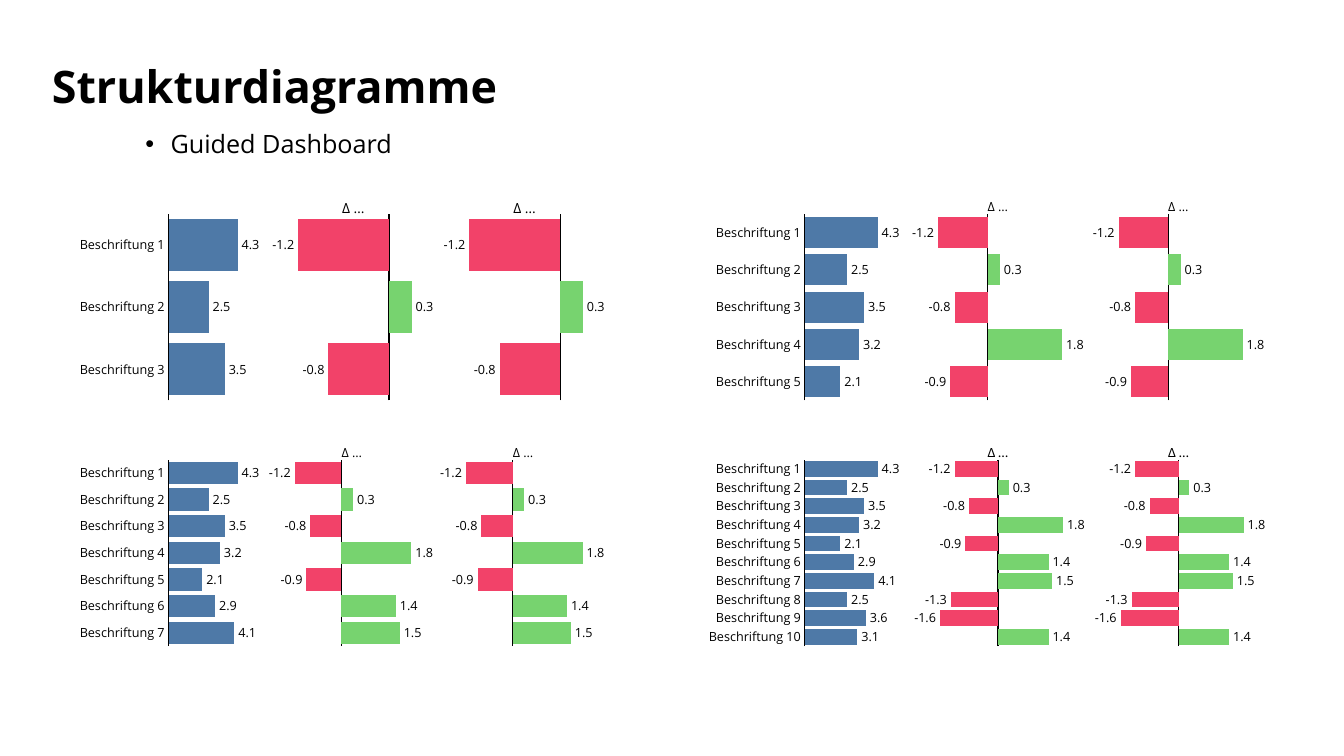
from lxml.etree import SubElement
from pptx import Presentation
from pptx.chart.data import CategoryChartData
from pptx.dml.color import RGBColor
from pptx.enum.chart import XL_CHART_TYPE, XL_LABEL_POSITION, XL_TICK_LABEL_POSITION, XL_TICK_MARK
from pptx.enum.text import MSO_ANCHOR
from pptx.oxml.ns import qn
from pptx.util import Pt

PX = 9525
FONT = "Open Sans"
COLORS = {"text": "000000", "value": "4E79A7", "gain": "77D36F", "loss": "F24269"}
VALUES = [4.3, 2.5, 3.5, 3.2, 2.1, 2.9, 4.1, 2.5, 3.6, 3.1]
DELTAS = [-1.2, 0.3, -0.8, 1.8, -0.9, 1.4, 1.5, -1.3, -1.6, 1.4]
LEFT = {"label_x": 52, "label_width": 200, "delta_xs": (255, 418), "delta_width": 159}
RIGHT = {"label_x": 652, "label_width": 211, "delta_xs": (866, 1038), "delta_width": 169}
TOP_ROW, BOTTOM_ROW, CHART_HEIGHT = 173, 407, 223


def color(name):
    """Return the named colour."""
    return RGBColor.from_string(COLORS[name])


def style_font(font, size, bold=False, name=FONT):
    """Give a font its face, size and text colour."""
    font.name, font.size, font.bold = name, Pt(size), bold
    font.color.rgb = color("text")


def add_text(slide, text, box, size, bold=False, anchor=MSO_ANCHOR.TOP, bullet=None):
    """Add one paragraph of text, with a hanging bullet if given."""
    frame = slide.shapes.add_textbox(*(n * PX for n in box)).text_frame
    frame.word_wrap = True
    frame.vertical_anchor = anchor
    paragraph = frame.paragraphs[0]
    paragraph.line_spacing = 0.9
    run = paragraph.add_run()
    run.text = text
    style_font(run.font, size, bold)
    if bullet:
        properties = paragraph._p.get_or_add_pPr()
        properties.set("marL", str(24 * PX))
        properties.set("indent", str(-24 * PX))
        SubElement(properties, qn("a:buFont")).set("typeface", "Arial")
        SubElement(properties, qn("a:buChar")).set("char", bullet)


def set_layout(parent, **settings):
    """Place a chart part by fractions of the chart's size."""
    layout = parent.find(qn("c:layout"))
    if layout is None:
        layout = SubElement(parent, qn("c:layout"))
        parent.insert(0, layout)
    manual = SubElement(layout, qn("c:manualLayout"))
    for tag, value in settings.items():
        SubElement(manual, qn(f"c:{tag}")).set("val", str(value))


def add_bars(slide, box, categories, values, scale, fill, plot_x, plot_width):
    """Add a horizontal bar chart without visible value axis."""
    data = CategoryChartData(number_format="#,##0.0")
    data.categories = categories
    data.add_series("Series 1", values)
    chart = slide.shapes.add_chart(
        XL_CHART_TYPE.BAR_CLUSTERED, *(n * PX for n in box), data).chart
    chart.has_legend = chart.has_title = False
    style_font(chart.font, 9)
    set_layout(chart._chartSpace.chart.plotArea, layoutTarget="inner", xMode="edge",
               yMode="edge", x=plot_x, y=0.138, w=plot_width, h=0.797)
    value_axis, category_axis = chart.value_axis, chart.category_axis
    value_axis.minimum_scale, value_axis.maximum_scale = scale
    value_axis.has_major_gridlines = value_axis.visible = False
    category_axis.reverse_order = True
    category_axis.major_tick_mark = XL_TICK_MARK.NONE
    category_axis.format.line.width = Pt(0.75)
    category_axis.format.line.color.rgb = color("text")
    style_font(category_axis.tick_labels.font, 9)
    plot = chart.plots[0]
    plot.gap_width, plot.vary_by_categories = 20, False
    series = plot.series[0]
    series.invert_if_negative = False
    series.format.fill.solid()
    series.format.fill.fore_color.rgb = color(fill)
    plot.has_data_labels = True
    labels = plot.data_labels
    labels.show_value = True
    labels.number_format, labels.number_format_is_linked = "#,##0.0", False
    labels.position = XL_LABEL_POSITION.OUTSIDE_END
    style_font(labels.font, 9)
    return chart


def add_delta_bars(slide, box, values, scale, title_size, title_font):
    """Add a titled chart of gains and losses without category labels."""
    categories = [str(n + 1) for n in range(len(values))]
    chart = add_bars(slide, box, categories, values, scale, "gain", 0.092, 0.816)
    chart.category_axis.tick_label_position = XL_TICK_LABEL_POSITION.NONE
    for index, value in enumerate(values):
        if value < 0:
            loss = chart.plots[0].series[0].points[index].format.fill
            loss.solid()
            loss.fore_color.rgb = color("loss")
    title = chart.chart_title
    run = title.text_frame.paragraphs[0].add_run()
    run.text = " ∆ …"
    style_font(run.font, title_size, name=title_font)
    set_layout(title._element, xMode="edge", yMode="edge", x=0.41, y=0.055)


def add_panel(slide, columns, top, count, scale, title_size=9, title_font=FONT):
    """Add a labelled value chart with its two delta charts."""
    categories = [f"Beschriftung {n + 1}" for n in range(count)]
    value_box = columns["label_x"], top, columns["label_width"], CHART_HEIGHT
    add_bars(slide, value_box, categories, VALUES[:count], (0, 5), "value", 0.543, 0.383)
    for x in columns["delta_xs"]:
        delta_box = x, top, columns["delta_width"], CHART_HEIGHT
        add_delta_bars(slide, delta_box, DELTAS[:count], scale, title_size, title_font)


def main():
    """Build the slide and save it."""
    presentation = Presentation()
    presentation.slide_width, presentation.slide_height = 1280 * PX, 720 * PX
    slide = presentation.slides.add_slide(presentation.slide_layouts[6])
    add_text(slide, "Strukturdiagramme", (40, 54, 1199, 61), 32, bold=True,
             anchor=MSO_ANCHOR.MIDDLE)
    add_text(slide, "Guided Dashboard", (129, 121, 1151, 57), 18, bullet="•")
    add_panel(slide, LEFT, TOP_ROW, 3, (-1.4, 0.4), title_size=10)
    add_panel(slide, RIGHT, TOP_ROW, 5, (-1.5, 2))
    add_panel(slide, LEFT, BOTTOM_ROW, 7, (-1.5, 2))
    add_panel(slide, RIGHT, BOTTOM_ROW, 10, (-2, 2), title_size=10, title_font="Calibri")
    presentation.save("out.pptx")


if __name__ == "__main__":
    main()
